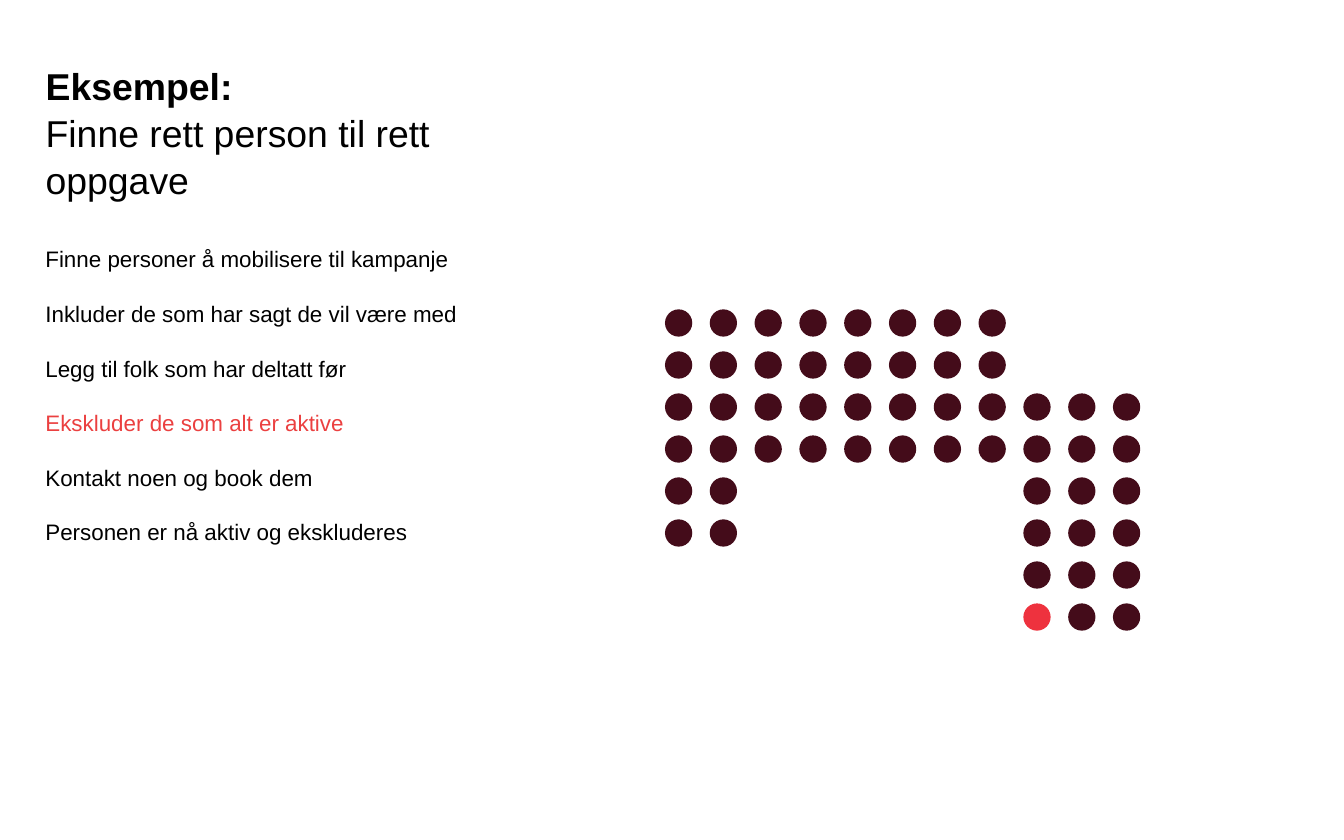
from dataclasses import dataclass
from itertools import product

from lxml.etree import SubElement
from pptx import Presentation
from pptx.dml.color import RGBColor
from pptx.enum.shapes import MSO_SHAPE
from pptx.enum.text import MSO_ANCHOR as Anchor, MSO_AUTO_SIZE as AutoSize, PP_ALIGN as Align
from pptx.oxml.ns import qn
from pptx.slide import Slide
from pptx.text.text import Font, TextFrame
from pptx.util import Emu, Inches, Pt

EMU_PER_PX = 914400 / 192


@dataclass(frozen=True)
class Theme:
    font: str = "Arial"
    text: str = "000000"
    highlight: str = "EB4040"
    dot: str = "440C1A"
    active_dot: str = "EE323E"
    title_size: int = 20
    body_size: int = 12


@dataclass(frozen=True)
class Box:
    left: int
    top: int
    width: int
    height: int

    def emu(self) -> tuple[Emu, ...]:
        return tuple(px(n) for n in (self.left, self.top, self.width, self.height))


@dataclass(frozen=True)
class DotBlock:
    """A rectangle of dots, placed by its first column and row in the grid."""
    column: int
    row: int
    columns: int
    rows: int


THEME = Theme()
TITLE_BOX = Box(46, 131, 589, 177)
STEPS_BOX = Box(46, 324, 670, 684)
TITLE = ("Eksempel:", "Finne rett person til rett oppgave")
STEPS = (
    "Finne personer å mobilisere til kampanje",
    "Inkluder de som har sagt de vil være med",
    "Legg til folk som har deltatt før",
    "Ekskluder de som alt er aktive",
    "Kontakt noen og book dem",
    "Personen er nå aktiv og ekskluderes",
)
HIGHLIGHTED_STEP = 3

GRID_LEFT, GRID_TOP = 950, 442
COLUMN_PITCH, ROW_PITCH = 64, 60
DOT_SIZE = 39
DOT_BLOCKS = (DotBlock(0, 0, 8, 4), DotBlock(0, 4, 2, 2), DotBlock(8, 2, 3, 6))
ACTIVE_DOT = (8, 7)


def px(length: int) -> Emu:
    return Emu(round(length * EMU_PER_PX))


def style_font(font: Font, size: int, color: str, bold: bool = False) -> None:
    font.name = THEME.font
    font.size = Pt(size)
    font.bold = bold
    font.color.rgb = RGBColor.from_string(color)


def prepare_frame(frame: TextFrame, anchor: Anchor) -> None:
    frame.word_wrap = True
    frame.auto_size = AutoSize.NONE
    frame.vertical_anchor = anchor
    frame.margin_left = frame.margin_right = Inches(0.1)
    frame.margin_top = frame.margin_bottom = Inches(0.1)


def add_title(slide: Slide) -> None:
    title = slide.shapes.title
    title.left, title.top, title.width, title.height = TITLE_BOX.emu()
    prepare_frame(title.text_frame, Anchor.BOTTOM)
    paragraph = title.text_frame.paragraphs[0]
    paragraph.text = "\v".join(TITLE)
    paragraph.alignment = Align.LEFT
    paragraph.line_spacing = 1.05
    for index, run in enumerate(paragraph.runs):
        style_font(run.font, THEME.title_size, THEME.text, bold=index == 0)
    # The line break needs its own size, or it takes the tall default one.
    for line_break in title.text_frame._txBody.iter(qn("a:br")):
        SubElement(line_break, qn("a:rPr"), sz=str(THEME.title_size * 100))


def add_steps(slide: Slide) -> None:
    frame = slide.shapes.add_textbox(*STEPS_BOX.emu()).text_frame
    prepare_frame(frame, Anchor.TOP)
    frame.text = "\n".join(STEPS)
    for index, paragraph in enumerate(frame.paragraphs):
        paragraph.line_spacing = 1.2
        paragraph.space_after = Pt(12)
        color = THEME.highlight if index == HIGHLIGHTED_STEP else THEME.text
        style_font(paragraph.runs[0].font, THEME.body_size, color)


def add_dot(slide: Slide, column: int, row: int) -> None:
    box = Box(GRID_LEFT + column * COLUMN_PITCH, GRID_TOP + row * ROW_PITCH, DOT_SIZE, DOT_SIZE)
    dot = slide.shapes.add_shape(MSO_SHAPE.OVAL, *box.emu())
    dot.shadow.inherit = False
    dot.fill.solid()
    color = THEME.active_dot if (column, row) == ACTIVE_DOT else THEME.dot
    dot.fill.fore_color.rgb = RGBColor.from_string(color)
    dot.line.fill.background()


def add_dot_block(slide: Slide, block: DotBlock) -> None:
    for row, column in product(range(block.rows), range(block.columns)):
        add_dot(slide, block.column + column, block.row + row)


def main() -> None:
    presentation = Presentation()
    presentation.slide_width, presentation.slide_height = px(1920), px(1200)
    title_only = presentation.slide_layouts.get_by_name("Title Only")
    slide = presentation.slides.add_slide(title_only)
    add_title(slide)
    add_steps(slide)
    for block in DOT_BLOCKS:
        add_dot_block(slide, block)
    presentation.save("out.pptx")


if __name__ == "__main__":
    main()
